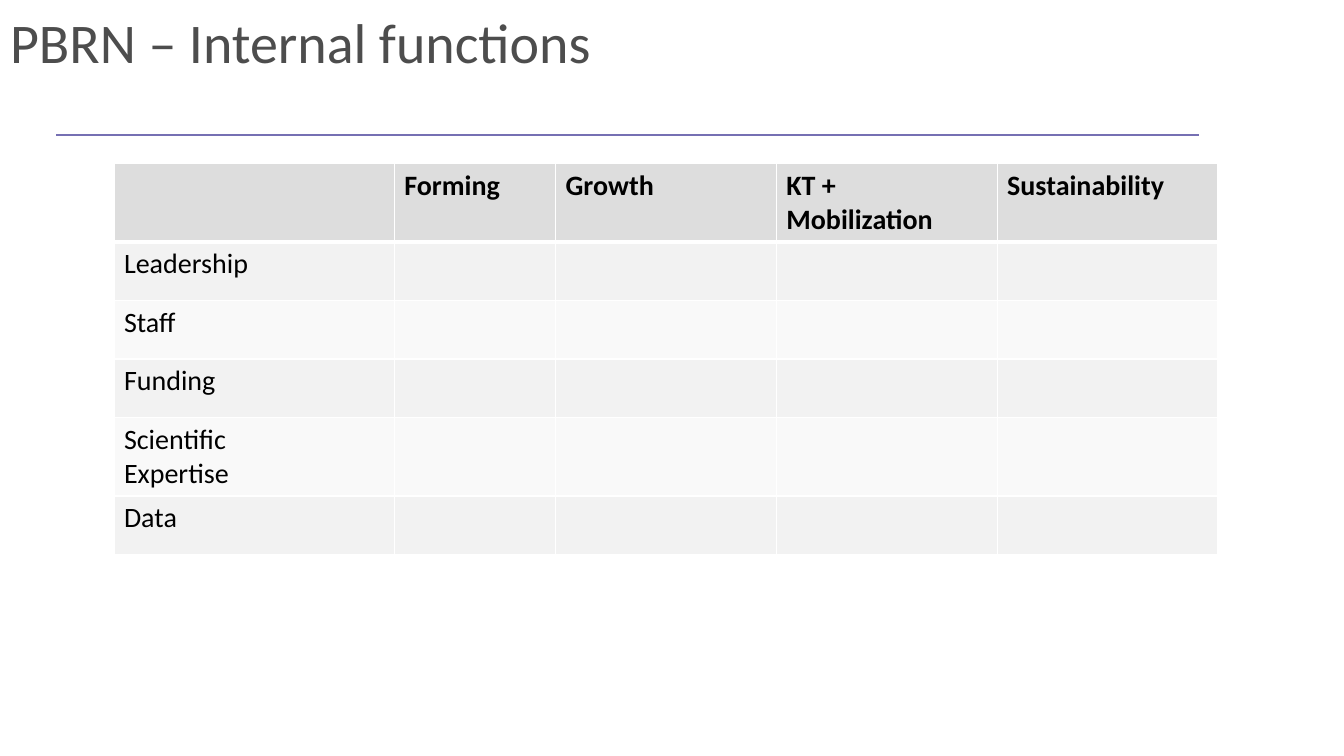
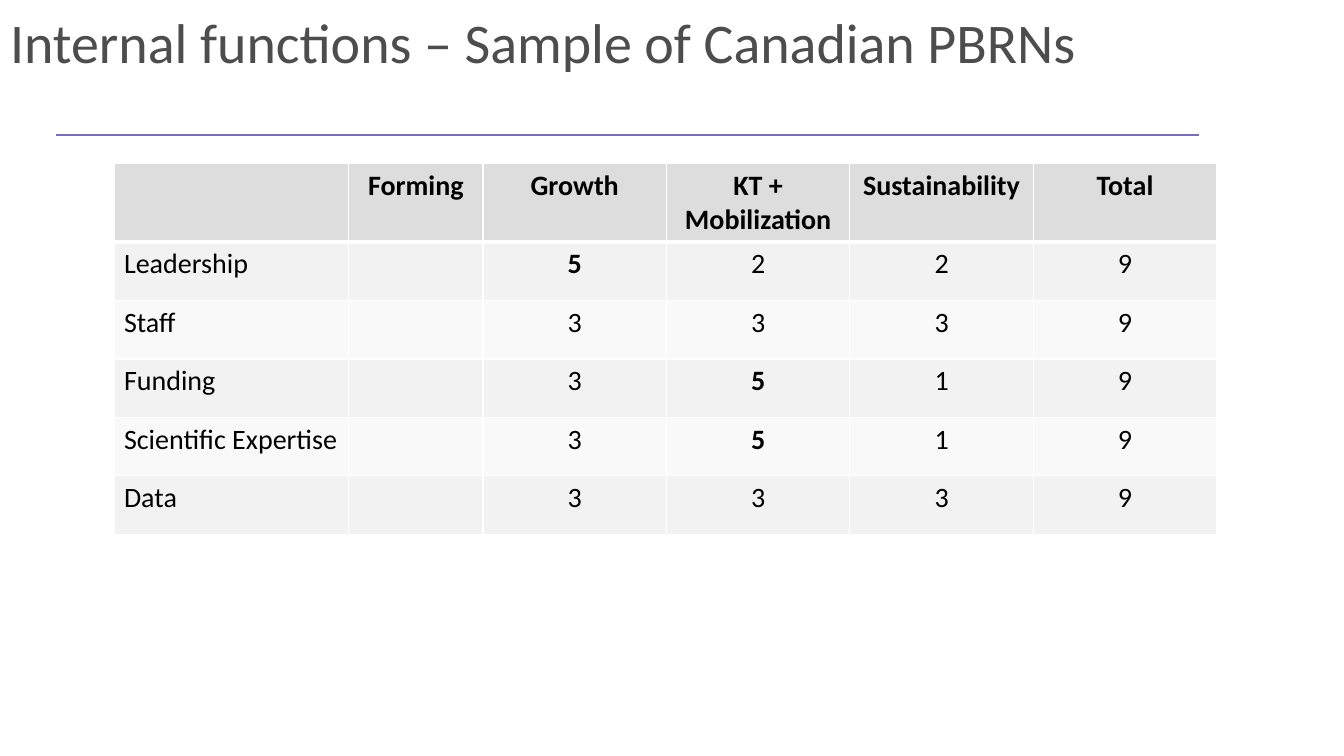
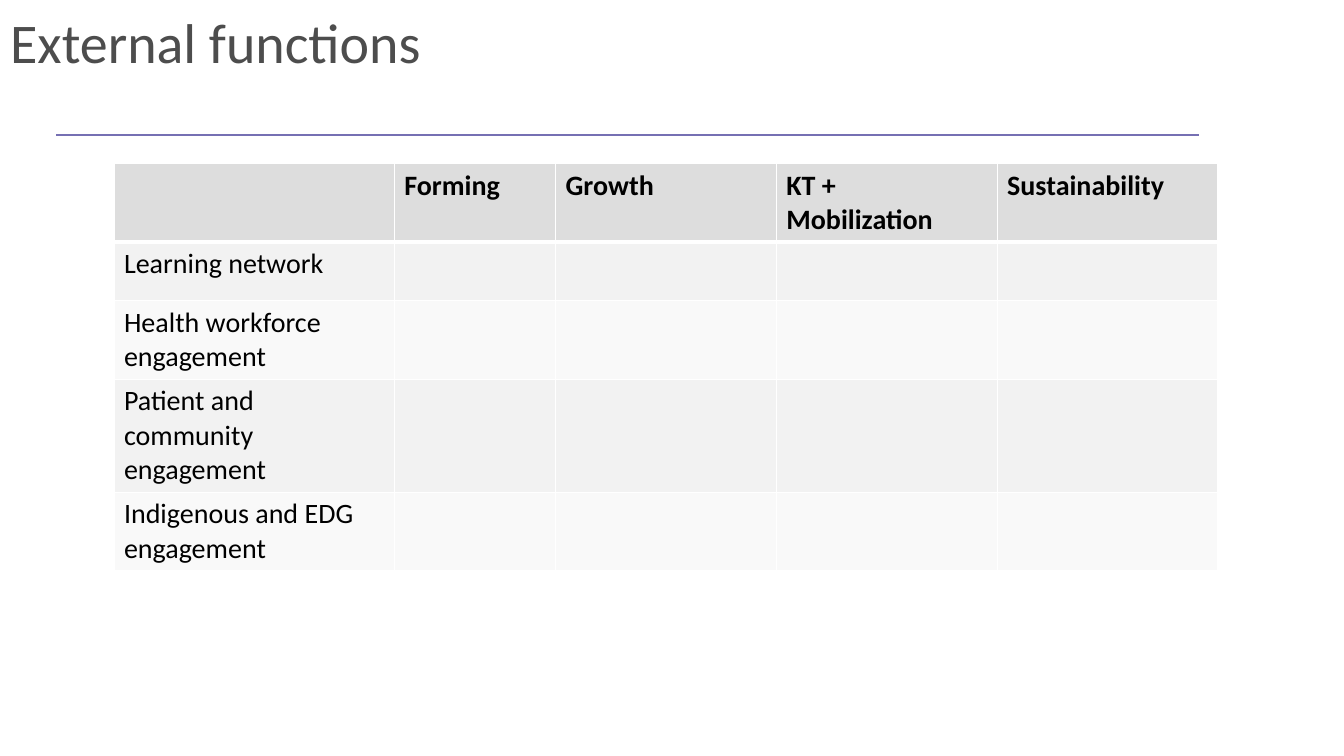
from lxml.etree import SubElement
from pptx import Presentation
from pptx.dml.color import RGBColor
from pptx.enum.shapes import MSO_CONNECTOR
from pptx.enum.text import MSO_ANCHOR, PP_ALIGN
from pptx.oxml.ns import qn
from pptx.util import Inches, Pt

INK = {
    "title": "4D4D4D", "rule": "7670B3", "text": "000000", "edge": "FFFFFF",
    "head": "DDDDDD", "odd": "F2F2F2", "even": "F9F9F9",
}


def write(frame, text, size=20, color="text", bold=False,
          align=PP_ALIGN.LEFT, space=1.0):
    frame.text = text
    for para in frame.paragraphs:
        para.alignment = align
        para.line_spacing = space
        for run in para.runs:
            font = run.font
            font.name = "Calibri"
            font.size = Pt(size)
            font.bold = bold
            font.color.rgb = RGBColor.from_string(INK[color])


def border(cell, top, base):
    props = cell._tc.get_or_add_tcPr()
    for side, width in (("L", 1), ("R", 1), ("T", top), ("B", base)):
        line = SubElement(props, qn(f"a:ln{side}"), w=str(Pt(width)))
        fill = SubElement(line, qn("a:solidFill"))
        SubElement(fill, qn("a:srgbClr"), val=INK["edge"])


# Content: title, column widths, body alignment, rows
stages = ["", "Forming", "Growth", "KT + Mobilization", "Sustainability"]
wide = [2.78, 1.6] + [2.19] * 3
slim = [2.33, 1.33] + [1.82] * 4

pages = [
    ("PBRN – Internal functions", wide, PP_ALIGN.LEFT, [
        stages,
        ["Leadership"],
        ["Staff"],
        ["Funding"],
        ["Scientific\nExpertise"],
        ["Data"],
    ]),
    ("Internal functions – Sample of Canadian PBRNs", slim, PP_ALIGN.CENTER, [
        stages + ["Total"],
        ["Leadership", "", "5", "2", "2", "9"],
        ["Staff", "", "3", "3", "3", "9"],
        ["Funding", "", "3", "5", "1", "9"],
        ["Scientific Expertise", "", "3", "5", "1", "9"],
        ["Data", "", "3", "3", "3", "9"],
    ]),
    ("External functions", wide, PP_ALIGN.LEFT, [
        stages,
        ["Learning network"],
        ["Health workforce engagement"],
        ["Patient and community engagement"],
        ["Indigenous and EDG engagement"],
    ]),
]

deck = Presentation()
deck.slide_width = Inches(13.33)
deck.slide_height = Inches(7.5)

for name, widths, align, rows in pages:
    slide = deck.slides.add_slide(deck.slide_layouts[5])

    # Rule under the title
    rule = slide.shapes.add_connector(
        MSO_CONNECTOR.STRAIGHT,
        Inches(0.56), Inches(1.34), Inches(11.89), Inches(1.34))
    rule.line.color.rgb = RGBColor.from_string(INK["rule"])
    rule.line.width = Pt(1)
    SubElement(rule._element.spPr, qn("a:effectLst"))

    # Title
    title = slide.shapes.title
    title.left, title.top = Inches(0), Inches(0)
    title.width, title.height = Inches(12.27), Inches(0.9)
    title.text_frame.vertical_anchor = MSO_ANCHOR.MIDDLE
    write(title.text_frame, name, size=40, color="title", space=0.9)

    # Table
    high = 0.58
    grid = slide.shapes.add_table(
        len(rows), len(widths), Inches(1.13), Inches(1.62),
        Inches(sum(widths)), Inches(high * len(rows))).table
    for col, width in zip(grid.columns, widths):
        col.width = Inches(width)
    for r, row in enumerate(rows):
        grid.rows[r].height = Inches(high)
        shade = "head" if r == 0 else "odd" if r % 2 else "even"
        for c in range(len(widths)):
            cell = grid.cell(r, c)
            border(cell, top=3 if r == 1 else 1, base=3 if r == 0 else 1)
            cell.fill.solid()
            cell.fill.fore_color.rgb = RGBColor.from_string(INK[shade])
            if c < len(row) and row[c]:
                write(cell.text_frame, row[c],
                      bold=r == 0 or row[c] == "5",
                      align=align if c else PP_ALIGN.LEFT)

deck.save("out.pptx")
